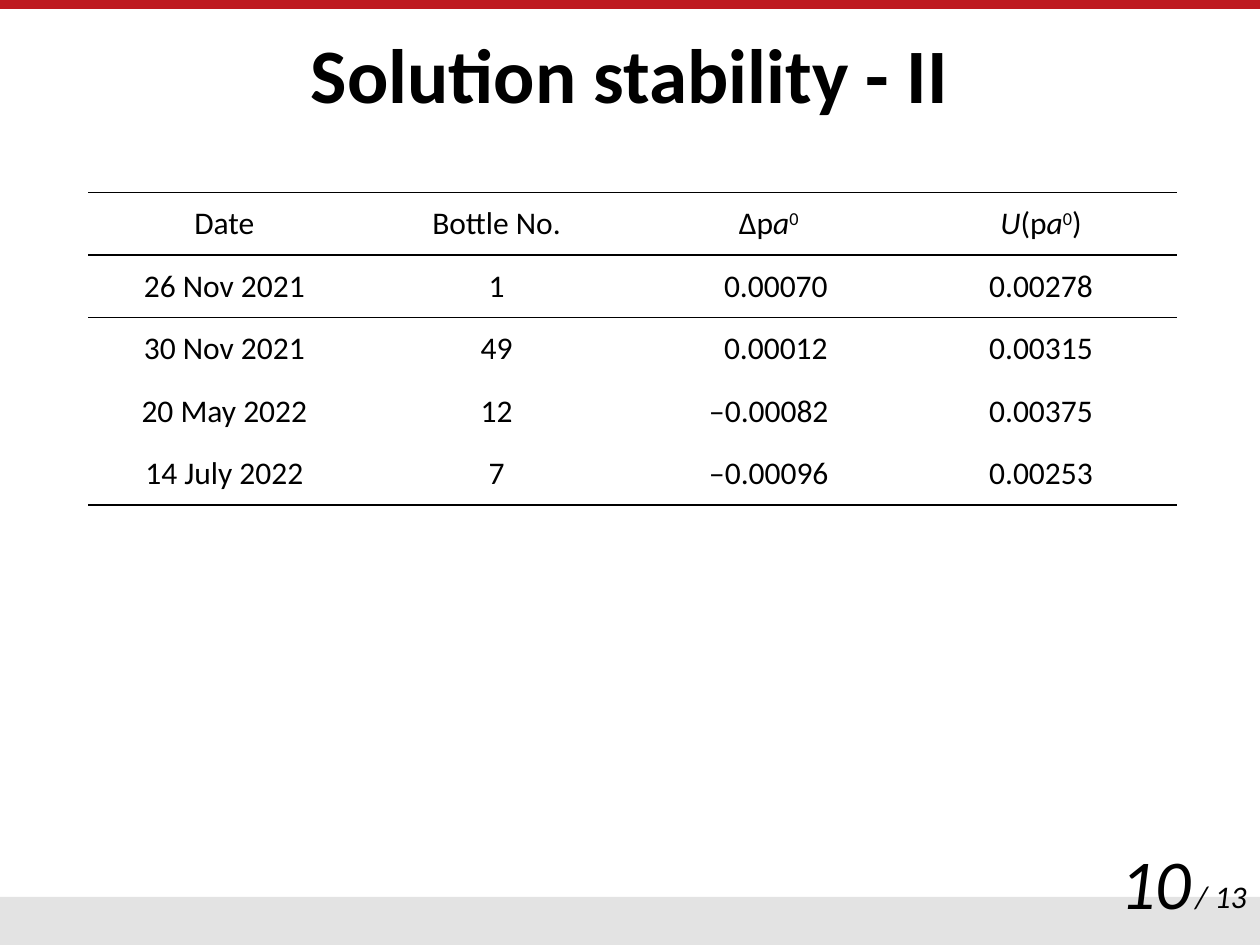
from dataclasses import dataclass

from lxml import etree
from pptx import Presentation
from pptx.dml.color import RGBColor
from pptx.enum.shapes import MSO_SHAPE
from pptx.enum.text import MSO_ANCHOR, PP_ALIGN
from pptx.oxml.ns import qn
from pptx.util import Cm, Pt

RECTANGLE = MSO_SHAPE.RECTANGLE
LEFT, CENTER, RIGHT = PP_ALIGN.LEFT, PP_ALIGN.CENTER, PP_ALIGN.RIGHT
TOP, MIDDLE, BOTTOM = MSO_ANCHOR.TOP, MSO_ANCHOR.MIDDLE, MSO_ANCHOR.BOTTOM


@dataclass(frozen=True)
class Theme:
    font: str = "Calibri"
    ink: str = "000000"
    red: str = "BE1A20"
    grey: str = "E3E3E3"
    title_size: int = 44
    number_size: int = 40
    body_size: int = 18
    rule_width: int = 1


@dataclass(frozen=True)
class Area:
    """Position and size in centimetres."""
    left: float
    top: float
    width: float
    height: float

    def lengths(self) -> tuple:
        return Cm(self.left), Cm(self.top), Cm(self.width), Cm(self.height)


@dataclass(frozen=True)
class Band:
    area: Area
    color: str


@dataclass(frozen=True)
class Label:
    text: str
    area: Area
    size: int
    align: PP_ALIGN
    anchor: MSO_ANCHOR
    bold: bool = False
    italic: bool = False
    line_spacing: float = 1.0


@dataclass(frozen=True)
class Piece:
    text: str
    italic: bool = False
    superscript: bool = False


THEME = Theme()
BANDS = [
    Band(Area(0, 18.08, 25.4, 0.97), THEME.grey),
    Band(Area(0, 0, 25.4, 0.18), THEME.red),
]
LABELS = [
    Label("10", Area(21.69, 16.71, 2.57, 2.03), THEME.number_size, RIGHT, BOTTOM, italic=True),
    Label("/ 13", Area(23.85, 17.55, 1.55, 1.02), THEME.body_size, LEFT, TOP, italic=True),
    Label("Solution stability - II", Area(0, 0, 25.4, 3.17), THEME.title_size, CENTER, MIDDLE,
          bold=True, line_spacing=0.9),
]

# Table content: a cell is plain text or a list of formatted pieces
ACTIVITY = [Piece("a", italic=True), Piece("0", superscript=True)]
ROWS = [
    ["Date", "Bottle No.", [Piece("Δp"), *ACTIVITY],
     [Piece("U", italic=True), Piece("(p"), *ACTIVITY, Piece(")")]],
    ["26 Nov 2021", "1", "0.00070", "0.00278"],
    ["30 Nov 2021", "49", "0.00012", "0.00315"],
    ["20 May 2022", "12", "‒0.00082", "0.00375"],
    ["14 July 2022", "7", "‒0.00096", "0.00253"],
]
TABLE_AREA = Area(1.78, 3.88, 21.95, 6.3)
RULED_EDGES = {0, 1, 2, len(ROWS)}
DELTA_COLUMN = 2
SIGN_INDENT = Cm(0.54)  # lines up unsigned values with the signed ones


def format_run(run, size: int, bold: bool = False, italic: bool = False) -> None:
    font = run.font
    font.name, font.size = THEME.font, Pt(size)
    font.bold, font.italic = bold, italic
    font.color.rgb = RGBColor.from_string(THEME.ink)


def add_band(page, band: Band) -> None:
    shape = page.shapes.add_shape(RECTANGLE, *band.area.lengths())
    shape.shadow.inherit = False
    shape.fill.solid()
    shape.fill.fore_color.rgb = RGBColor.from_string(band.color)
    shape.line.fill.background()


def add_label(page, label: Label) -> None:
    box = page.shapes.add_textbox(*label.area.lengths())
    frame = box.text_frame
    frame.word_wrap = True
    frame.vertical_anchor = label.anchor
    frame.text = label.text
    para = frame.paragraphs[0]
    para.alignment = label.align
    para.line_spacing = label.line_spacing
    format_run(para.runs[0], label.size, label.bold, label.italic)


def set_borders(cell, row: int) -> None:
    """Rule the top and bottom edges where wanted and clear the others."""
    ruled = {"a:lnL": False, "a:lnR": False,
             "a:lnT": row in RULED_EDGES, "a:lnB": row + 1 in RULED_EDGES}
    properties = cell._tc.get_or_add_tcPr()
    for position, (tag, visible) in enumerate(ruled.items()):
        line = etree.Element(qn(tag))
        if visible:
            line.set("w", str(Pt(THEME.rule_width)))
            fill = etree.SubElement(line, qn("a:solidFill"))
            etree.SubElement(fill, qn("a:srgbClr"), val=THEME.ink)
        else:
            etree.SubElement(line, qn("a:noFill"))
        properties.insert(position, line)


def fill_cell(cell, content: str | list[Piece]) -> None:
    cell.fill.background()
    cell.vertical_anchor = MIDDLE
    para = cell.text_frame.paragraphs[0]
    para.alignment = CENTER
    pieces = [Piece(content)] if isinstance(content, str) else content
    for piece in pieces:
        span = para.add_run()
        span.text = piece.text
        format_run(span, THEME.body_size, italic=piece.italic)
        if piece.superscript:
            span.font._element.set("baseline", "30000")


def add_results_table(page) -> None:
    table = page.shapes.add_table(len(ROWS), len(ROWS[0]), *TABLE_AREA.lengths()).table
    table.first_row = table.horz_banding = False
    for row, contents in enumerate(ROWS):
        for column, content in enumerate(contents):
            cell = table.cell(row, column)
            fill_cell(cell, content)
            set_borders(cell, row)
            if row and column == DELTA_COLUMN and not content.startswith("‒"):
                cell.margin_left = SIGN_INDENT


def main() -> None:
    deck = Presentation()
    deck.slide_width, deck.slide_height = Cm(25.4), Cm(19.05)
    page = deck.slides.add_slide(deck.slide_layouts[6])

    # Bands along the slide edges
    for band in BANDS:
        add_band(page, band)
    # Page number and title
    for label in LABELS:
        add_label(page, label)
    # Stability results
    add_results_table(page)

    deck.save("out.pptx")


if __name__ == "__main__":
    main()
